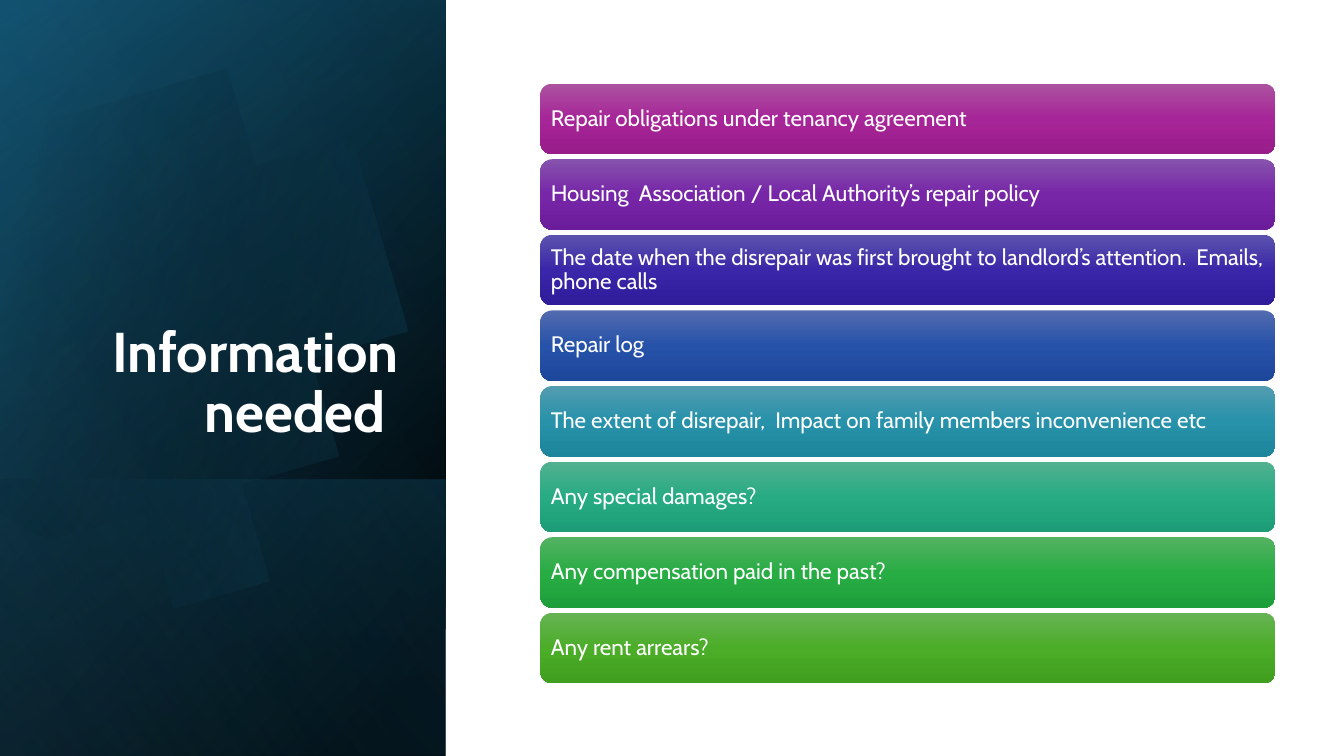
import math
import pptx
import pptx.util
import pptx.dml.color
import pptx.enum.shapes
import pptx.enum.text
import pptx.oxml.ns
from lxml import etree

Inches, Pt = pptx.util.Inches, pptx.util.Pt
RGB = pptx.dml.color.RGBColor
SHAPE = pptx.enum.shapes.MSO_SHAPE
ANCHOR = pptx.enum.text.MSO_ANCHOR
ALIGN = pptx.enum.text.PP_ALIGN
qn = pptx.oxml.ns.qn

# Content
TITLE = "Information needed "
ITEMS = [
    ("Repair obligations under tenancy agreement", "AC53A0", "A62598", "991C8B"),
    ("Housing  Association / Local Authority’s repair policy ", "8653AD", "7726A7", "6B1C9A"),
    ("The date when the disrepair was first brought to landlord’s attention.  Emails, phone calls",
     "5C53AE", "3926A8", "2F1C9A"),
    ("Repair log", "536BAF", "2652A9", "1D479B"),
    ("The extent of disrepair,  Impact on family members inconvenience etc",
     "539CB0", "2792AA", "1D859C"),
    ("Any special damages?", "53B190", "27AB83", "1D9D77"),
    ("Any compensation paid in the past? ", "54B262", "28AC44", "1E9E3A"),
    ("Any rent arrears? ", "66B354", "4BAD28", "409F1E"),
]

# Colours; gradient stops are (position %, colour, opacity %)
FONT = "Cabin"
WHITE = RGB(0xFF, 0xFF, 0xFF)
BLACK = RGB(0, 0, 0)
TEAL = RGB(0x15, 0x60, 0x82)
DEEP = RGB(0x10, 0x48, 0x62)
SKY = RGB(0x46, 0xB1, 0xE1)

# Side panel layers: left, top, width, height, angle, stops
FULL = (-1.54, 1.54, 7.5, 4.42)
BASE = [
    (FULL, 50, [(8, BLACK, 100), (100, DEEP, 100)]),
    (FULL, 30, [(0, BLACK, 0), (99, TEAL, 46)]),
    ((0.84, 3.92, 2.74, 4.42), 130, [(2, TEAL, 29), (100, BLACK, 30)]),
]
GLOW = (FULL, 120, [(0, BLACK, 0), (99, SKY, 11)])

# Disc outline: start, then curves (six numbers) and lines (two)
TILT = 343.9
HUB = (1.585, 3.345)
START = (1.49, 1.1)
EDGE = [
    (2.46, 1.12, 3.35, 1.77, 3.63, 2.75),
    (3.98, 3.97, 3.28, 5.23, 2.07, 5.58),
    (1.31, 5.8, 0.53, 5.61, -0.03, 5.14),
    (-0.15, 5.03), (-0.15, 1.75), (0, 1.61),
    (0.23, 1.42, 0.5, 1.28, 0.8, 1.19),
    (1.03, 1.13, 1.26, 1.1, 1.49, 1.1),
]
STEPS = 16


def shade(shape, angle, stops):
    """Plain shape with a linear gradient."""
    shape.shadow.inherit = False
    shape.line.fill.background()
    shape.fill.gradient()
    shape.fill.gradient_angle = (360 - angle) % 360
    bag = shape._element.spPr.find(qn("a:gradFill")).find(qn("a:gsLst"))
    for old in list(bag):
        bag.remove(old)
    for pos, color, alpha in stops:
        stop = etree.SubElement(bag, qn("a:gs"), pos=str(pos * 1000))
        tint = etree.SubElement(stop, qn("a:srgbClr"), val=str(color))
        if alpha < 100:
            etree.SubElement(tint, qn("a:alpha"), val=str(alpha * 1000))


def panel(slide, box, angle, stops):
    """Layer turned a quarter and mirrored."""
    shape = slide.shapes.add_shape(SHAPE.RECTANGLE, *map(Inches, box))
    shape.rotation = 90
    shape._element.spPr.find(qn("a:xfrm")).set("flipH", "1")
    shade(shape, angle, stops)


def trace():
    """Points along the disc outline."""
    points = [START]
    for part in EDGE:
        if len(part) == 2:
            points.append(part)
            continue
        knots = [points[-1], part[:2], part[2:4], part[4:]]
        for step in range(1, STEPS + 1):
            t = step / STEPS
            mix = [(1 - t) ** 3, 3 * t * (1 - t) ** 2, 3 * t * t * (1 - t), t ** 3]
            points.append(tuple(sum(m * k[i] for m, k in zip(mix, knots)) for i in (0, 1)))
    return points


def unturn(point):
    """Turn a point back by the tilt of the disc."""
    turn = math.radians(-TILT)
    x, y = point[0] - HUB[0], point[1] - HUB[1]
    return (HUB[0] + x * math.cos(turn) - y * math.sin(turn),
            HUB[1] + x * math.sin(turn) + y * math.cos(turn))


def write(shape, text, size, anchor, align, bold=False):
    frame = shape.text_frame
    frame.word_wrap = True
    frame.vertical_anchor = anchor
    para = frame.paragraphs[0]
    para.alignment = align
    para.line_spacing = 0.9
    run = para.add_run()
    run.text = text
    run.font.name = FONT
    run.font.size = Pt(size)
    run.font.bold = bold
    run.font.color.rgb = WHITE
    return frame


def main():
    deck = pptx.Presentation()
    deck.slide_width, deck.slide_height = Inches(13.33), Inches(7.5)
    slide = deck.slides.add_slide(deck.slide_layouts[6])

    # Side panel
    for layer in BASE:
        panel(slide, *layer)
    points = [unturn(p) for p in trace()]
    pen = slide.shapes.build_freeform(*points[0], scale=Inches(1))
    pen.add_line_segments(points[1:], close=True)
    disc = pen.convert_to_shape()
    disc.rotation = TILT
    shade(disc, 30, [(29, BLACK, 0), (100, TEAL, 43)])
    panel(slide, *GLOW)

    # Title
    title = slide.shapes.add_textbox(*map(Inches, (0.64, 1.84, 3.41, 2.62)))
    write(title, TITLE, 40, ANCHOR.BOTTOM, ALIGN.RIGHT, True)

    # List of bars
    for row, (text, *tones) in enumerate(ITEMS):
        box = (5.36, 0.83 + row * 0.75, 7.29, 0.7)
        bar = slide.shapes.add_shape(SHAPE.ROUNDED_RECTANGLE, *map(Inches, box))
        shade(bar, 90, [(50 * i, RGB.from_string(c), 100) for i, c in enumerate(tones)])
        frame = write(bar, text, 16, ANCHOR.MIDDLE, ALIGN.LEFT)
        frame.margin_left = frame.margin_right = Inches(0.07)
        frame.margin_top = frame.margin_bottom = Inches(0.07)

    deck.save("out.pptx")


if __name__ == "__main__":
    main()
